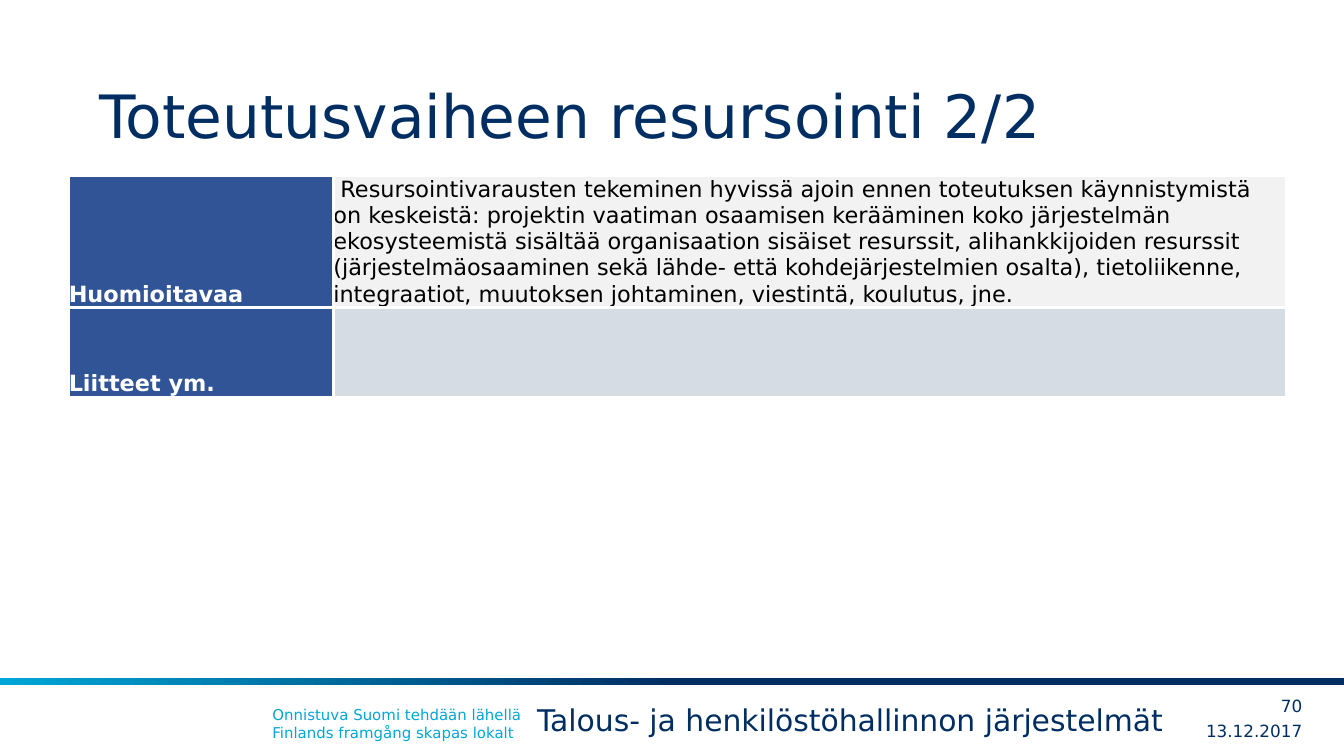
"""Build the resourcing slide with its title, table and footer."""
from typing import NamedTuple

from lxml import etree
from pptx import Presentation, util as u
from pptx.dml.color import RGBColor
from pptx.enum import shapes, text
from pptx.oxml import ns

FONT = "DejaVu Sans"
NAVY, CYAN, WHITE, BLUE = "002E63", "00A6D6", "FFFFFF", "305496"


class Label(NamedTuple):
    words: str
    left: float
    top: float
    width: float
    height: float
    size: float
    color: str = NAVY
    right: bool = False


class Row(NamedTuple):
    heading: str
    words: str
    fill: str
    height: float


LABELS = [
    Label("Onnistuva Suomi tehdään lähellä\nFinlands framgång skapas lokalt",
          4.9, 13.21, 16.61, 0.94, 8, CYAN),
    Label("13.12.2017", 22.1, 13.54, 2.51, 0.56, 9, right=True),
    Label("70", 23.52, 13.06, 1.09, 0.56, 9, right=True),
    Label("Talous- ja henkilöstöhallinnon järjestelmät", 9.9, 13.13, 12.7, 0.94, 16),
]
ROWS = [
    Row("Huomioitavaa",
        " Resursointivarausten tekeminen hyvissä ajoin ennen toteutuksen "
        "käynnistymistä on keskeistä: projektin vaatiman osaamisen kerääminen koko "
        "järjestelmän ekosysteemistä sisältää organisaation sisäiset resurssit, "
        "alihankkijoiden resurssit (järjestelmäosaaminen sekä lähde- että "
        "kohdejärjestelmien osalta), tietoliikenne, integraatiot, muutoksen "
        "johtaminen, viestintä, koulutus, jne.", "F2F2F2", 2.46),
    Row("Liitteet ym.", "", "D6DCE4", 1.69),
]
COLUMNS = (5, 18.01)


def rgb(value: str) -> RGBColor:
    return RGBColor.from_string(value)


def write(tf, words: str, *, size: float, color: str = NAVY, bold: bool = False,
          align=text.PP_ALIGN.LEFT) -> None:
    tf.text = words
    tf.word_wrap = True
    for p in tf.paragraphs:
        p.alignment = align
        for r in p.runs:
            r.font.name, r.font.size, r.font.bold = FONT, u.Pt(size), bold
            r.font.color.rgb = rgb(color)


def add_label(s, label: Label) -> None:
    tf = s.shapes.add_textbox(*map(u.Cm, label[1:5])).text_frame
    align = text.PP_ALIGN.LEFT
    if label.right:
        align = text.PP_ALIGN.RIGHT
        tf.vertical_anchor = text.MSO_ANCHOR.MIDDLE
        tf.margin_left = tf.margin_right = tf.margin_top = tf.margin_bottom = 0
    write(tf, label.words, size=label.size, color=label.color, align=align)


def add_borders(cell, color: str, width: float) -> None:
    tc_pr = cell._tc.get_or_add_tcPr()
    for side in "LRTB":
        ln = etree.SubElement(tc_pr, ns.qn(f"a:ln{side}"), w=str(u.Pt(width)))
        fill = etree.SubElement(ln, ns.qn("a:solidFill"))
        etree.SubElement(fill, ns.qn("a:srgbClr"), val=color)


def fill_cell(cell, words: str, fill: str, color: str, bold: bool) -> None:
    cell.margin_left = cell.margin_right = cell.margin_top = cell.margin_bottom = 0
    cell.vertical_anchor = text.MSO_ANCHOR.BOTTOM
    add_borders(cell, WHITE, 1.5)
    cell.fill.solid()
    cell.fill.fore_color.rgb = rgb(fill)
    if words:
        write(cell.text_frame, words, size=12, color=color, bold=bold)


def add_resource_table(s) -> None:
    height = sum(row.height for row in ROWS)
    table = s.shapes.add_table(len(ROWS), len(COLUMNS), u.Cm(1.3), u.Cm(3.33),
                               u.Cm(sum(COLUMNS)), u.Cm(height)).table
    for column, width in zip(table.columns, COLUMNS):
        column.width = u.Cm(width)
    for i, row in enumerate(ROWS):
        table.rows[i].height = u.Cm(row.height)
        fill_cell(table.cell(i, 0), row.heading, BLUE, WHITE, True)
        fill_cell(table.cell(i, 1), row.words, row.fill, "000000", False)


def add_footer_band(s, width: int) -> None:
    sp = s.shapes.add_shape(shapes.MSO_SHAPE.RECTANGLE, 0, u.Cm(12.82), width, u.Cm(0.13))
    sp.shadow.inherit = False
    sp.line.fill.background()
    sp.fill.gradient()
    sp.fill.gradient_angle = 180
    for stop, color, position in zip(sp.fill.gradient_stops, (NAVY, CYAN), (0.5, 1)):
        stop.color.rgb = rgb(color)
        stop.position = position


def set_title(sp, words: str) -> None:
    sp.left, sp.top, sp.width, sp.height = map(u.Cm, (1.88, 0.58, 21.62, 2.39))
    tf = sp.text_frame
    tf.margin_left = tf.margin_right = 0
    tf.margin_top = tf.margin_bottom = u.Cm(0.13)
    tf.vertical_anchor = text.MSO_ANCHOR.BOTTOM
    tf.auto_size = text.MSO_AUTO_SIZE.NONE
    write(tf, words, size=32)


def main() -> None:
    prs = Presentation()
    prs.slide_width, prs.slide_height = u.Cm(25.4), u.Cm(14.29)
    s = prs.slides.add_slide(prs.slide_layouts[5])
    set_title(s.shapes.title, "Toteutusvaiheen resursointi 2/2")
    add_footer_band(s, prs.slide_width)
    add_resource_table(s)
    for label in LABELS:
        add_label(s, label)
    prs.save("out.pptx")


if __name__ == "__main__":
    main()
